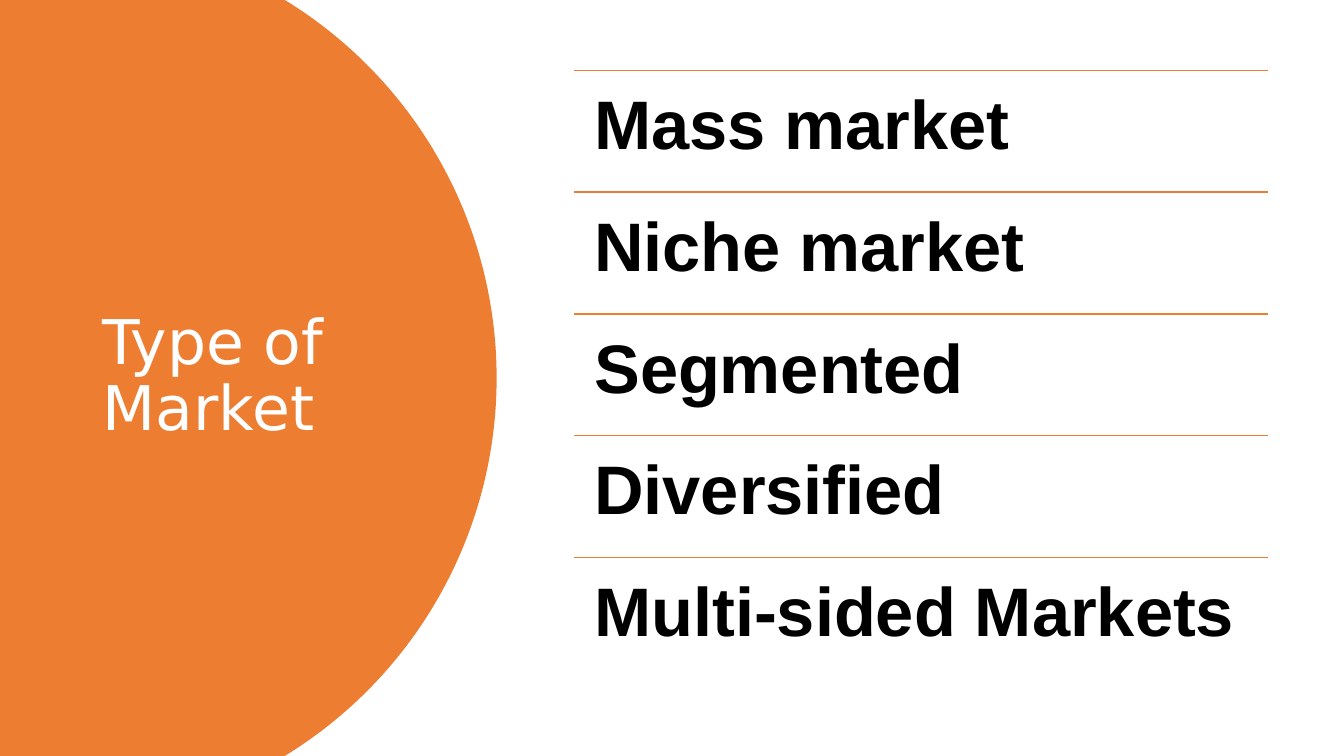
from dataclasses import dataclass
from math import asin, cos, sin

from lxml import etree
from pptx import Presentation
from pptx.dml.color import RGBColor
from pptx.enum.shapes import MSO_CONNECTOR
from pptx.enum.text import MSO_ANCHOR
from pptx.oxml.ns import qn
from pptx.slide import Slide
from pptx.util import Emu, Pt

EMU_PER_PX = 9525
SLIDE_WIDTH, SLIDE_HEIGHT = 1280, 720
STRAIGHT = MSO_CONNECTOR.STRAIGHT
TOP, MIDDLE = MSO_ANCHOR.TOP, MSO_ANCHOR.MIDDLE

ORANGE, WHITE, BLACK = "ED7D31", "FFFFFF", "000000"

DISC_CENTER_X, DISC_RADIUS, ARC_STEPS = 51, 422, 120

LIST_LEFT, LIST_TOP, LIST_WIDTH, ROW_HEIGHT = 547, 67, 661, 116
MARKETS = [
    "Mass market",
    "Niche market",
    "Segmented",
    "Diversified",
    "Multi-sided Markets",
]


@dataclass(frozen=True)
class Box:
    left: int
    top: int
    width: int
    height: int


@dataclass(frozen=True)
class TextStyle:
    font: str
    size: int
    color: str
    bold: bool
    anchor: MSO_ANCHOR
    inset_x: int
    inset_y: int


TITLE_STYLE = TextStyle("DejaVu Sans", 44, WHITE, False, MIDDLE, 10, 5)
MARKET_STYLE = TextStyle("Arial", 49, BLACK, True, TOP, 19, 19)


def px(length: float) -> Emu:
    return Emu(round(length * EMU_PER_PX))


def rgb(color: str) -> RGBColor:
    return RGBColor.from_string(color)


def add_disc(slide: Slide) -> None:
    """Fill the left side up to a circular arc that the slide edges cut off."""
    middle = SLIDE_HEIGHT / 2
    half_angle = asin(middle / DISC_RADIUS)
    angles = [half_angle * (2 * step / ARC_STEPS - 1) for step in range(ARC_STEPS + 1)]
    arc = [
        (px(DISC_CENTER_X + DISC_RADIUS * cos(angle)), px(middle + DISC_RADIUS * sin(angle)))
        for angle in angles
    ]
    builder = slide.shapes.build_freeform(0, 0)
    builder.add_line_segments([*arc, (0, px(SLIDE_HEIGHT))], close=True)
    disc = builder.convert_to_shape()
    disc.shadow.inherit = False
    disc.fill.solid()
    disc.fill.fore_color.rgb = rgb(ORANGE)
    disc.line.fill.background()


def add_text(slide: Slide, box: Box, text: str, style: TextStyle) -> None:
    shape = slide.shapes.add_textbox(px(box.left), px(box.top), px(box.width), px(box.height))
    text_frame = shape.text_frame
    text_frame.word_wrap = True
    text_frame.vertical_anchor = style.anchor
    text_frame.margin_left = text_frame.margin_right = px(style.inset_x)
    text_frame.margin_top = text_frame.margin_bottom = px(style.inset_y)
    text_frame.text = text
    paragraph = text_frame.paragraphs[0]
    paragraph.line_spacing = 0.9
    font = paragraph.runs[0].font
    font.name = style.font
    font.size = Pt(style.size)
    font.bold = style.bold
    font.color.rgb = rgb(style.color)


def add_rule(slide: Slide, left: int, top: int, width: int) -> None:
    rule = slide.shapes.add_connector(STRAIGHT, px(left), px(top), px(left + width), px(top))
    rule.line.color.rgb = rgb(ORANGE)
    rule.line.width = Pt(1)
    etree.SubElement(rule._element.spPr, qn("a:effectLst"))


def main() -> None:
    presentation = Presentation()
    presentation.slide_width = px(SLIDE_WIDTH)
    presentation.slide_height = px(SLIDE_HEIGHT)
    slide = presentation.slides.add_slide(presentation.slide_layouts[6])

    add_disc(slide)
    add_text(slide, Box(88, 67, 310, 585), "Type of Market", TITLE_STYLE)
    for index, market in enumerate(MARKETS):
        top = LIST_TOP + index * ROW_HEIGHT
        add_rule(slide, LIST_LEFT, top, LIST_WIDTH)
        add_text(slide, Box(LIST_LEFT, top, LIST_WIDTH, ROW_HEIGHT), market, MARKET_STYLE)

    presentation.save("out.pptx")


if __name__ == "__main__":
    main()
